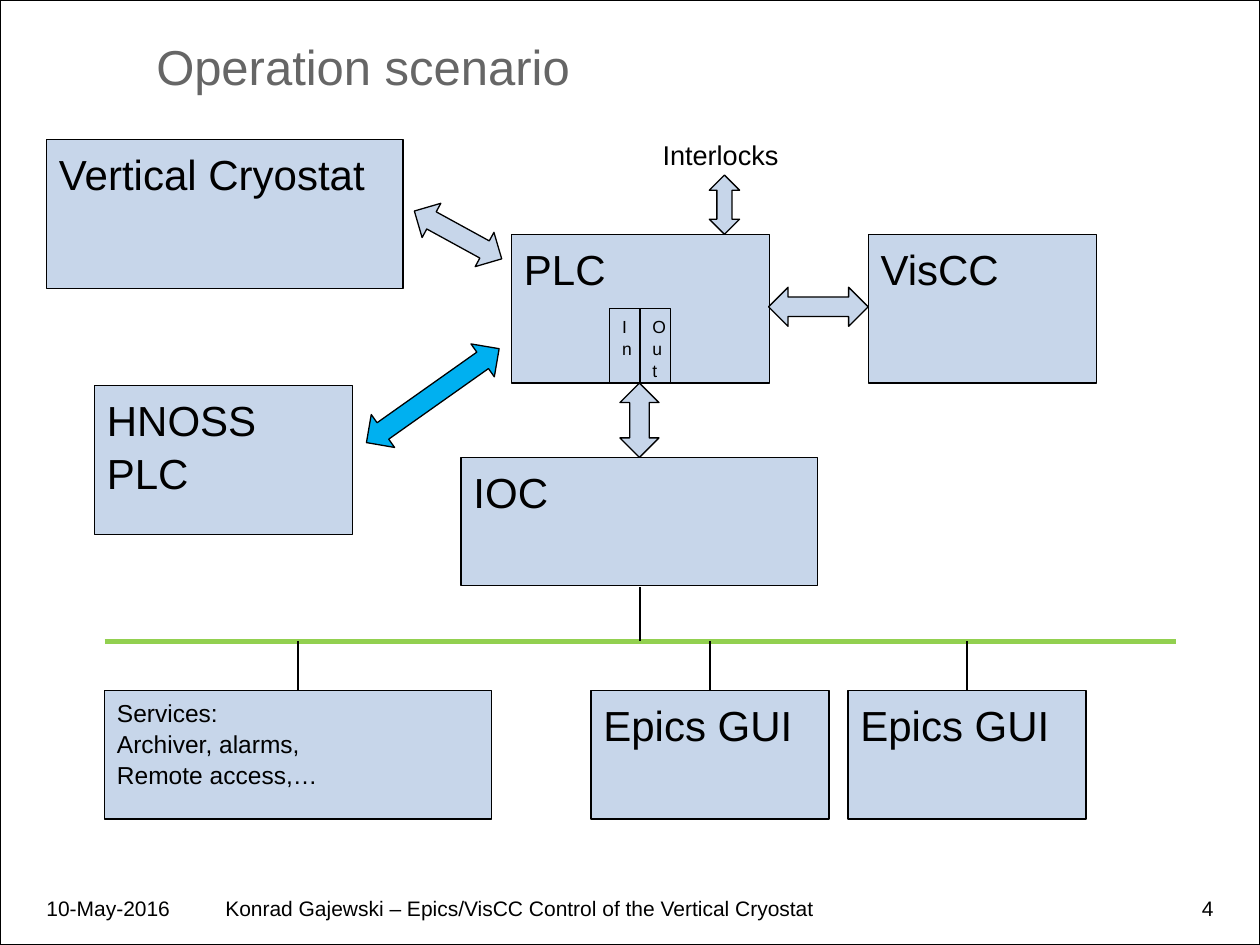
from dataclasses import dataclass

from lxml import etree
from pptx import Presentation
from pptx import util as u
from pptx.dml.color import RGBColor
from pptx.enum import shapes, text
from pptx.oxml.ns import qn

Kind = shapes.MSO_SHAPE


@dataclass(frozen=True)
class Theme:
    font: str = "Arial"
    ink: str = "000000"
    title_ink: str = "666666"
    block: str = "C7D6EA"
    accent: str = "00B0F0"
    bus: str = "92D050"
    title: float = 28
    heading: float = 24
    label: float = 15.5
    detail: float = 14
    footer: float = 12
    port: float = 10
    leading: float = 1.05
    hairline: float = 0.75
    bus_line: float = 3


THEME = Theme()
prs = Presentation()
prs.slide_width, prs.slide_height = u.Inches(10), u.Inches(7.5)
CELL = prs.slide_width / 100  # the slide is a grid of 100 columns by 75 rows


@dataclass(frozen=True)
class Box:
    """A rectangle in grid columns and rows."""
    left: float
    top: float
    width: float
    height: float

    def inner(self, col, row, width, height):
        return Box(self.left + col, self.top + row, width, height)

    def emu(self):
        return [round(n * CELL) for n in (self.left, self.top, self.width, self.height)]


def write(frame, lines, size, color=THEME.ink, align=text.PP_ALIGN.LEFT,
          leading=None):
    frame.word_wrap = True
    frame.text = lines
    for line in frame.paragraphs:
        line.alignment = align
        line.line_spacing = leading
        line.font.name, line.font.size = THEME.font, u.Pt(size)
        line.font.color.rgb = RGBColor.from_string(color)


def outline(line, color=THEME.ink, width=THEME.hairline):
    line.color.rgb = RGBColor.from_string(color)
    line.width = u.Pt(width)


def add_solid(slide, kind, box, fill=THEME.block, turn=0):
    solid = slide.shapes.add_shape(kind, *box.emu())
    solid.shadow.inherit = False
    solid.rotation = turn
    if fill:
        solid.fill.solid()
        solid.fill.fore_color.rgb = RGBColor.from_string(fill)
    else:
        solid.fill.background()
    outline(solid.line)
    return solid


def add_block(slide, box, lines, size=THEME.heading):
    frame = add_solid(slide, Kind.RECTANGLE, box).text_frame
    frame.vertical_anchor = text.MSO_ANCHOR.TOP
    write(frame, lines, size, leading=THEME.leading)


def add_label(slide, box, words, size, align=text.PP_ALIGN.LEFT):
    write(slide.shapes.add_textbox(*box.emu()).text_frame, words, size, align=align)


def add_wire(slide, box, color=THEME.ink, width=THEME.hairline):
    left, top, across, down = box.emu()
    wire = slide.shapes.add_connector(
        shapes.MSO_CONNECTOR.STRAIGHT, left, top, left + across, top + down)
    outline(wire.line, color, width)
    etree.SubElement(wire._element.spPr, qn("a:effectLst"))


def add_heading(slide, box):
    title = slide.shapes.title
    title.left, title.top, title.width, title.height = box.emu()
    frame = title.text_frame
    frame.vertical_anchor = text.MSO_ANCHOR.BOTTOM
    frame.margin_bottom = 0
    write(frame, "Operation scenario", THEME.title, THEME.title_ink)


def add_control(slide, box):
    """Controllers and the links between them."""
    add_label(slide, box.inner(47.9, 0, 11.8, 3.4), "Interlocks", THEME.label)

    # Controllers
    for name, *place in (
        ("Vertical Cryostat", 0, 0.6, 28.3, 11.8),
        ("PLC", 36.9, 8.1, 20.5, 11.8),
        ("VisCC", 65.2, 8.1, 18.1, 11.8),
        ("HNOSS PLC", 3.8, 20.1, 20.5, 11.8),
        ("IOC", 32.9, 25.8, 28.3, 10.2),
    ):
        add_block(slide, box.inner(*place), name)

    # Input and output areas at the foot of the PLC
    port_width = 2.4
    for index, name in enumerate(("In", "Out")):
        port = box.inner(44.7 + index * port_width, 14, port_width, 5.9)
        add_block(slide, port, name, THEME.port)

    # Two-way links
    across, upright = Kind.LEFT_RIGHT_ARROW, Kind.UP_DOWN_ARROW
    for kind, place, turn, fill in (
        (across, (28.7, 6.6, 7.9, 3.1), 28.7, THEME.block),
        (upright, (52.6, 3.4, 2.4, 4.7), 0, THEME.block),
        (across, (57.3, 12.3, 7.9, 3.1), 0, THEME.block),
        (upright, (45.5, 19.9, 3.1, 5.9), 0, THEME.block),
        (across, (24.2, 19.3, 12.9, 3.2), 324.7, THEME.accent),
    ):
        add_solid(slide, kind, box.inner(*place), fill, turn)


def add_network(slide, box):
    """The bus, its feed from the IOC and the clients below it."""
    feed, drop, client_height = 4.3, 3.9, 10.2
    add_wire(slide, box.inner(0, feed, box.width, 0), THEME.bus, THEME.bus_line)
    add_wire(slide, box.inner(box.width / 2, 0, 0, feed))

    services = "Services:\nArchiver, alarms,\nRemote access,…"
    for lines, col, width, size in (
        (services, 0, 30.7, THEME.detail),
        ("Epics GUI", 38.6, 18.9, THEME.heading),
        ("Epics GUI", 59, 18.9, THEME.heading),
    ):
        client = box.inner(col, feed + drop, width, client_height)
        add_block(slide, client, lines, size)
        add_wire(slide, box.inner(col + width / 2, feed, 0, drop))


def add_footer(slide, box):
    left, right = text.PP_ALIGN.LEFT, text.PP_ALIGN.RIGHT
    for words, col, width, align in (
        ("10-May-2016", 0, 12.6, left),
        ("Konrad Gajewski – Epics/VisCC Control of the Vertical Cryostat",
         14.2, 71.7, left),
        ("4", 87.5, 7.1, right),
    ):
        add_label(slide, box.inner(col, 0, width, box.height), words,
                  THEME.footer, align)


def main():
    slide = prs.slides.add_slide(prs.slide_layouts[5])
    add_solid(slide, Kind.RECTANGLE, Box(0, 0, 100, 75), fill=None)  # page border
    add_heading(slide, Box(11.4, 2.1, 84, 5.5))
    add_control(slide, Box(3.7, 10.5, 83.3, 36))
    add_network(slide, Box(8.3, 46.6, 85, 18.4))
    add_footer(slide, Box(2.7, 70.6, 94.6, 2.8))
    prs.save("out.pptx")


if __name__ == "__main__":
    main()
